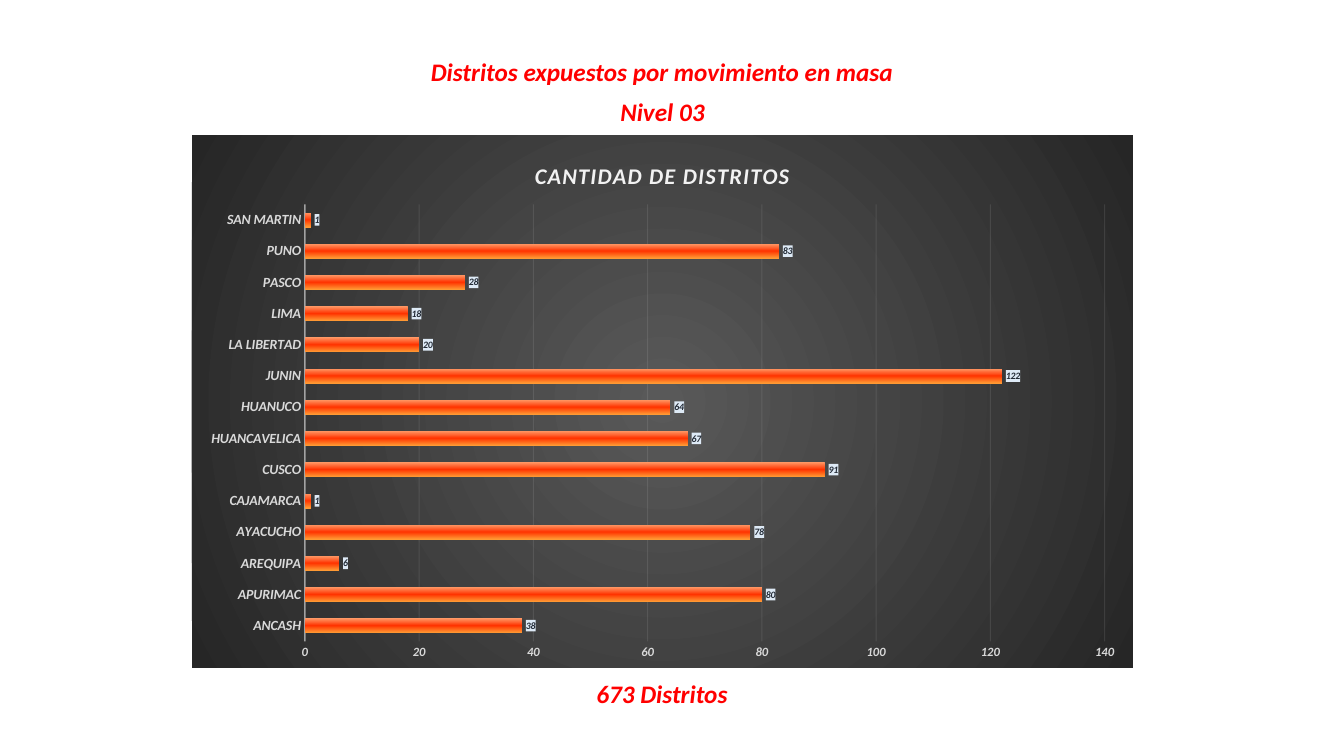
from lxml.etree import SubElement
from pptx import Presentation
from pptx.chart.data import CategoryChartData
from pptx.dml.color import RGBColor
from pptx.enum.chart import XL_CHART_TYPE, XL_LABEL_POSITION, XL_TICK_MARK
from pptx.enum.text import MSO_ANCHOR, MSO_AUTO_SIZE, PP_ALIGN
from pptx.oxml import parse_xml
from pptx.oxml.ns import nsdecls, qn
from pptx.util import Pt

EMU_PER_PX = 914400 / 100.8
FONT = "Calibri"
COLORS = {
    "heading": "FF0000", "chart_title": "F2F2F2", "axis_text": "D9D9D9",
    "line": "F2F2F2", "label_text": "222A35", "label_fill": "DEEAF6",
    "center": "595959", "edge": "262626",
    "bar_top": "FF9966", "bar_middle": "FF3300", "bar_bottom": "FF9933",
}
DISTRICTS = {
    "ANCASH": 38, "APURIMAC": 80, "AREQUIPA": 6, "AYACUCHO": 78, "CAJAMARCA": 1,
    "CUSCO": 91, "HUANCAVELICA": 67, "HUANUCO": 64, "JUNIN": 122,
    "LA LIBERTAD": 20, "LIMA": 18, "PASCO": 28, "PUNO": 83, "SAN MARTIN": 1,
}
RADIAL = ('<a:path path="circle"><a:fillToRect l="50000" t="50000" '
          'r="50000" b="50000"/></a:path>')
VERTICAL = '<a:lin ang="5400000" scaled="0"/>'


def px(length):
    return round(length * EMU_PER_PX)


def format_font(font, size, color):
    font.name, font.size = FONT, Pt(size)
    font.bold = font.italic = True
    font.color.rgb = RGBColor.from_string(COLORS[color])


def write_text(frame, text, size=18, color="heading", spacing=0):
    para = frame.paragraphs[0]
    para.alignment = PP_ALIGN.CENTER
    span = para.add_run()
    span.text = text
    format_font(span.font, size, color)
    if spacing:
        span.font._element.set("spc", str(spacing))


def format_line(line, width, opacity):
    line.width = Pt(width)
    line.fill.solid()
    line.fill.fore_color.rgb = RGBColor.from_string(COLORS["line"])
    color = line._get_or_add_ln().find(".//" + qn("a:srgbClr"))
    SubElement(color, qn("a:alpha")).set("val", str(opacity * 1000))


def shape_properties(fill):
    return parse_xml(f'<c:spPr {nsdecls("c", "a")}>{fill}<a:ln><a:noFill/></a:ln></c:spPr>')


def gradient(stops, direction):
    marks = "".join(f'<a:gs pos="{position * 1000}"><a:srgbClr val="{COLORS[name]}"/></a:gs>'
                    for position, name in stops)
    return f'<a:gradFill rotWithShape="1"><a:gsLst>{marks}</a:gsLst>{direction}</a:gradFill>'


def manual_layout(**values):
    inner = '<c:layoutTarget val="inner"/>' if "w" in values else ""
    modes = '<c:xMode val="edge"/><c:yMode val="edge"/>'
    sizes = "".join(f'<c:{key} val="{value}"/>' for key, value in values.items())
    return parse_xml(f'<c:layout {nsdecls("c")}><c:manualLayout>{inner}{modes}{sizes}'
                     '</c:manualLayout></c:layout>')


def replace_layout(parent, layout, position):
    for old in parent.findall(qn("c:layout")):
        parent.remove(old)
    parent.insert(position, layout)


class SlideBuilder:
    def __init__(self, deck):
        self.slide = deck.slides.add_slide(deck.slide_layouts[5])

    def fill_heading(self, box, text):
        frame = box.text_frame
        frame.word_wrap = False
        frame.auto_size = MSO_AUTO_SIZE.NONE
        frame.vertical_anchor = MSO_ANCHOR.MIDDLE
        write_text(frame, text)

    def title(self, text, left, top, width, height):
        box = self.slide.shapes.title
        box.left, box.top, box.width, box.height = map(px, (left, top, width, height))
        self.fill_heading(box, text)

    def heading(self, text, *place):
        self.fill_heading(self.slide.shapes.add_textbox(*map(px, place)), text)

    def bar_chart(self, title, values, *place):
        data = CategoryChartData(number_format="#,##0")
        data.categories = list(values)
        data.add_series("Series 1", list(values.values()))
        chart = self.slide.shapes.add_chart(
            XL_CHART_TYPE.BAR_CLUSTERED, *map(px, place), data).chart
        chart.has_legend = False
        chart.font.name, chart.font.size = FONT, Pt(10)

        # Background, title and plot area
        root = chart._chartSpace
        background = gradient([(0, "center"), (100, "edge")], RADIAL)
        root.find(qn("c:chart")).addnext(shape_properties(background))
        write_text(chart.chart_title.text_frame, title, size=16,
                   color="chart_title", spacing=100)
        replace_layout(chart.chart_title._element, manual_layout(x=0.36, y=0.04), 1)
        replace_layout(root.find(".//" + qn("c:plotArea")),
                       manual_layout(x=0.12, y=0.13, w=0.85, h=0.82), 0)
        self.axes(chart)
        self.bars(chart.plots[0])

    def axes(self, chart):
        for axis, size in ((chart.category_axis, 10), (chart.value_axis, 9)):
            axis.major_tick_mark = axis.minor_tick_mark = XL_TICK_MARK.NONE
            format_font(axis.tick_labels.font, size, "axis_text")
        format_line(chart.category_axis.format.line, 1, 54)
        scale = chart.value_axis
        scale.minimum_scale, scale.maximum_scale, scale.major_unit = 0, 140, 20
        scale.tick_labels.number_format = "#,##0"
        scale.tick_labels.number_format_is_linked = False
        scale.format.line.fill.background()
        format_line(scale.major_gridlines.format.line, 0.75, 10)

    def bars(self, plot):
        plot.gap_width, plot.overlap, plot.vary_by_categories = 115, -20, False
        series = plot.series[0]
        series.invert_if_negative = False
        colors = gradient([(0, "bar_top"), (50, "bar_middle"), (100, "bar_bottom")], VERTICAL)
        series._element.find(qn("c:tx")).addnext(shape_properties(colors))
        labels = series.data_labels
        labels.show_value = True
        labels.position = XL_LABEL_POSITION.OUTSIDE_END
        labels.number_format, labels.number_format_is_linked = "#,##0", False
        format_font(labels.font, 7, "label_text")
        fill = f'<a:solidFill><a:srgbClr val="{COLORS["label_fill"]}"/></a:solidFill>'
        labels._element.find(qn("c:numFmt")).addnext(shape_properties(fill))


def main():
    deck = Presentation()
    deck.slide_width, deck.slide_height = px(1344), px(756)
    page = SlideBuilder(deck)

    # Headings
    page.title("Distritos expuestos por movimiento en masa", 418, 51, 488, 40)
    page.heading("Nivel 03", 609, 91, 107, 40)

    # Districts by region and their total
    page.bar_chart("CANTIDAD DE DISTRITOS", DISTRICTS, 192, 135, 941, 533)
    page.heading("673 Distritos", 578, 673, 168, 40)
    deck.save("out.pptx")


if __name__ == "__main__":
    main()
